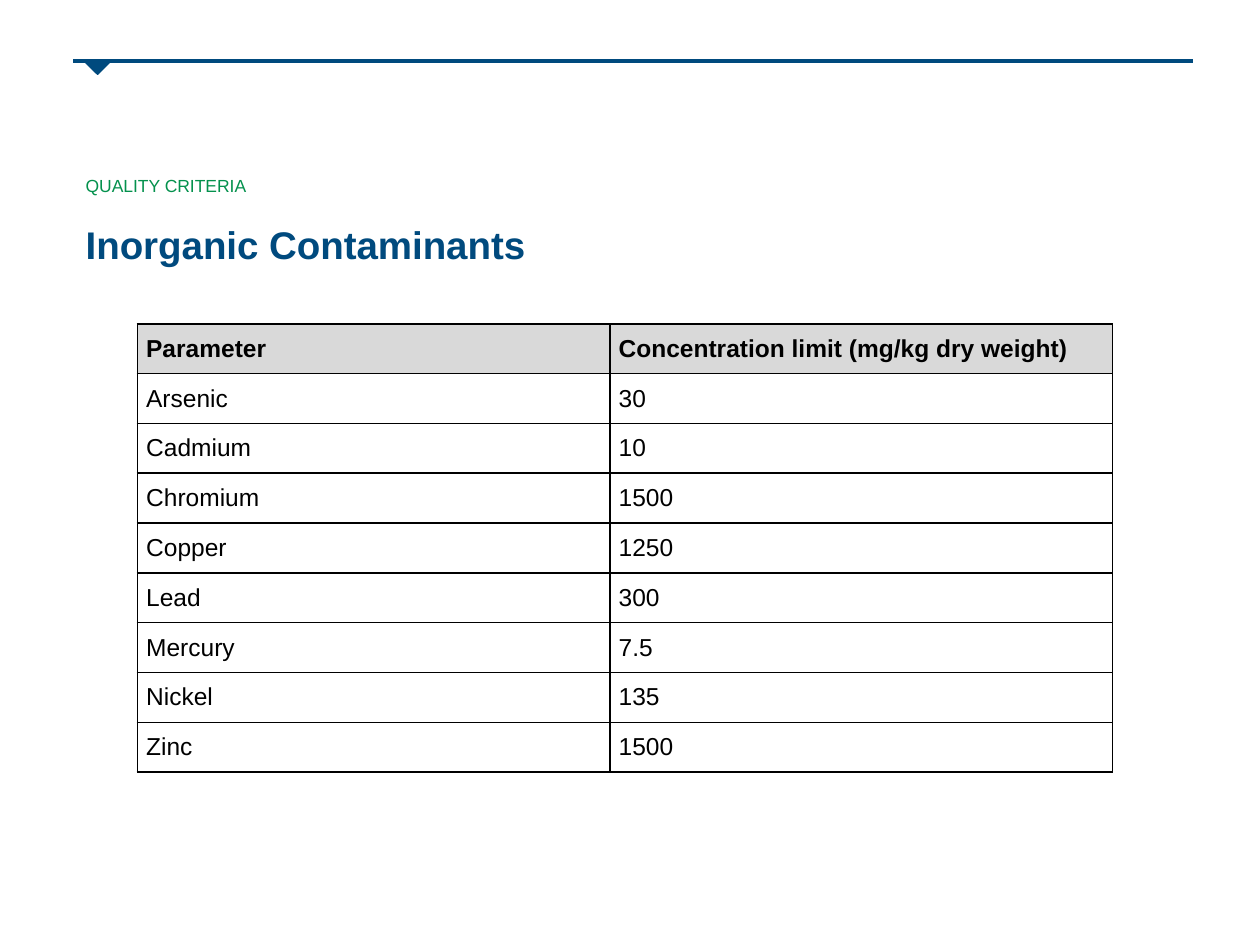
from dataclasses import dataclass
from lxml.etree import SubElement as Sub
from pptx import Presentation as Deck
from pptx.dml.color import RGBColor as Rgb
from pptx.enum.shapes import MSO_CONNECTOR as Link, MSO_SHAPE as Form
from pptx.enum.text import MSO_ANCHOR as Anchor, MSO_AUTO_SIZE as Fit, PP_ALIGN as Align
from pptx.oxml import parse_xml as to_xml
from pptx.oxml.ns import nsdecls, qn
from pptx.util import Inches, Pt


@dataclass(frozen=True)
class Theme:
    face: str = "Arial"
    navy: str = "004A7E"
    green: str = "04914D"
    black: str = "000000"
    gray: str = "D9D9D9"
    small: int = 10
    body: int = 14
    head: int = 22


def put(item, form):
    for key, value in form.items():
        setattr(item, key, value)


class Page:
    cols, rows = 100, 75

    def __init__(self, deck, theme):
        self.theme = theme
        self.slide = deck.slides.add_slide(deck.slide_layouts[1])
        self.wide = deck.slide_width / self.cols
        self.high = deck.slide_height / self.rows

    def box(self, x, y, w, h):
        return [round(n) for n in (x * self.wide, y * self.high, w * self.wide, h * self.high)]

    def font(self, para, size, color, bold=False):
        put(para.font, {"name": self.theme.face, "size": Pt(size), "bold": bold})
        para.font.color.rgb = Rgb.from_string(color)

    def rule(self, x, y, w):
        left, top, width, _ = self.box(x, y, w, 0)
        line = self.slide.shapes.add_connector(Link.STRAIGHT, left, top, left + width, top)
        line.line.color.rgb = Rgb.from_string(self.theme.navy)
        line.line.width = Pt(2)
        Sub(line._element.spPr, qn("a:effectLst"))

    def mark(self, *place):
        shape = self.slide.shapes.add_shape(Form.RIGHT_TRIANGLE, *self.box(*place))
        shape.rotation = 315
        shape.shadow.inherit = False
        shape.fill.solid()
        navy = Rgb.from_string(self.theme.navy)
        shape.fill.fore_color.rgb = shape.line.color.rgb = navy
        shape.line.width = Pt(0.75)

    def text(self, slot, words, place, size, color, bold=False):
        shape = self.slide.placeholders[slot]
        put(shape, dict(zip(("left", "top", "width", "height"), self.box(*place))))
        frame = shape.text_frame
        put(frame, {"text": words, "word_wrap": True, "auto_size": Fit.NONE,
                    "vertical_anchor": Anchor.MIDDLE,
                    "margin_top": 0, "margin_bottom": 0})
        para = frame.paragraphs[0]
        props = para._p.get_or_add_pPr()
        put(para, {"alignment": Align.LEFT, "space_before": Pt(0)})
        for key in ("marL", "indent"):
            props.set(key, "0")
        Sub(props, qn("a:buNone"))
        self.font(para, size, color, bold)

    def edge(self, cell):
        props = cell._tc.get_or_add_tcPr()
        for spot, side in enumerate("LRTB"):
            props.insert(spot, to_xml(
                f'<a:ln{side} {nsdecls("a")} w="{Pt(1)}"><a:solidFill>'
                f'<a:srgbClr val="{self.theme.black}"/></a:solidFill></a:ln{side}>'))

    def cell(self, cell, words, head):
        put(cell, {"text": words, "vertical_anchor": Anchor.MIDDLE,
                   "margin_left": Inches(0.07), "margin_right": Inches(0.07),
                   "margin_top": 0, "margin_bottom": 0})
        if head:
            cell.fill.solid()
            cell.fill.fore_color.rgb = Rgb.from_string(self.theme.gray)
        else:
            cell.fill.background()
        self.font(cell.text_frame.paragraphs[0], self.theme.body, self.theme.black, head)
        self.edge(cell)

    def table(self, data, x, y, widths, h):
        place = self.box(x, y, sum(widths), h)
        grid = self.slide.shapes.add_table(len(data), len(widths), *place).table
        grid.horz_banding = False
        for col, width in zip(grid.columns, widths):
            col.width = round(width * self.wide)
        for r, line in enumerate(data):
            grid.rows[r].height = round(place[3] / len(data))
            for c, words in enumerate(line):
                self.cell(grid.cell(r, c), words, r == 0)


def main():
    deck = Deck()
    put(deck, {"slide_width": Inches(10), "slide_height": Inches(7.5)})
    theme = Theme()
    page = Page(deck, theme)
    page.rule(5.8, 4.85, 88.9)
    page.mark(7, 4.1, 1.5, 1.5)
    page.text(1, "QUALITY CRITERIA", (5.8, 13.3, 65.7, 2.8), theme.small, theme.green)
    page.text(0, "Inorganic Contaminants", (5.8, 17.3, 88.9, 4.2), theme.head, theme.navy, True)
    limits = [
        ("Parameter", "Concentration limit (mg/kg dry weight)"),
        ("Arsenic", "30"),
        ("Cadmium", "10"),
        ("Chromium", "1500"),
        ("Copper", "1250"),
        ("Lead", "300"),
        ("Mercury", "7.5"),
        ("Nickel", "135"),
        ("Zinc", "1500"),
    ]
    page.table(limits, 10.9, 25.7, (37.5, 39.9), 35.6)
    deck.save("out.pptx")


if __name__ == "__main__":
    main()
